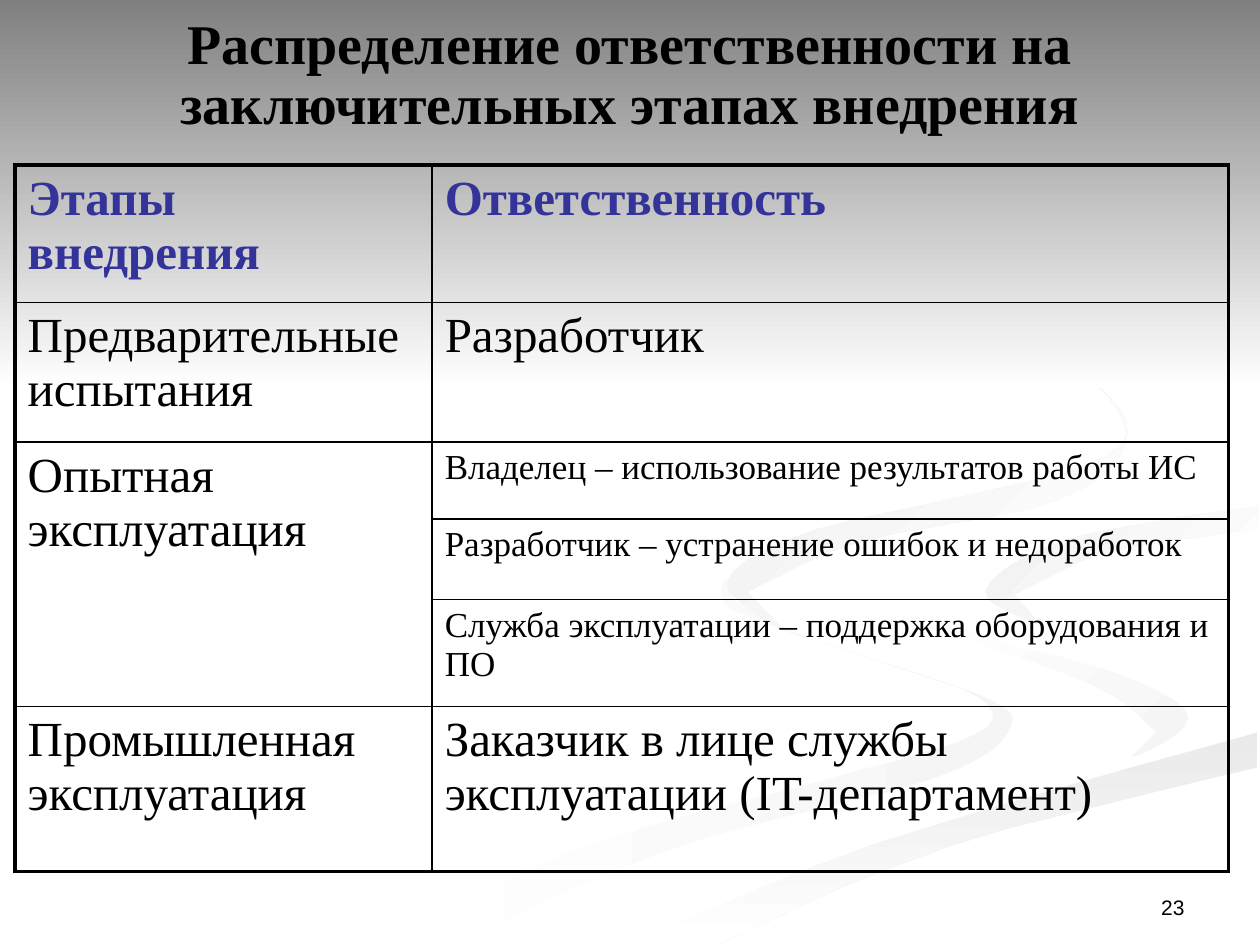
import pptx
import pptx.dml.color
import pptx.enum.shapes
import pptx.enum.text
import pptx.oxml
import pptx.oxml.ns
import pptx.util

PX = 9144  # 100 px to the inch
COLORS = {
    "black": "000000", "white": "FFFFFF", "heading": "333399", "gray": "808080",
    "mist": "F5F5F5", "silver": "EAEAEA", "pearl": "F1F1F1", "smoke": "EDEDED",
}
SERIF = "Times New Roman"
CURVE_STEPS = 5

# Each ribbon: start colour, end colour, clockwise gradient angle, curved edges
RIBBONS = [
    ("white", "mist", 0, [
        [(575, 459), (581, 484), (679, 519), (776, 553), (774, 583), (652, 620),
         (458, 674), (300, 749)],
        [(361, 749), (532, 674), (740, 618), (800, 581), (781, 553), (642, 507),
         (583, 477)]]),
    ("white", "mist", 45, [
        [(724, 464), (758, 498), (888, 535), (943, 570), (894, 605)],
        [(918, 581), (868, 544), (746, 500)]]),
    ("silver", "white", 90, [
        [(503, 749), (696, 669), (998, 581)],
        [(998, 609), (752, 672), (571, 749)]]),
    ("white", "white", 0, [
        [(999, 387), (755, 432), (734, 483), (905, 540), (936, 587), (743, 643),
         (477, 749)],
        [(503, 749), (696, 669), (999, 581)],
        [(999, 538), (832, 498), (781, 463), (850, 427), (999, 402)]]),
    ("pearl", "white", 45, [
        [(998, 402), (850, 427), (782, 469), (826, 496)],
        [(805, 472), (878, 439), (998, 420)]]),
    ("smoke", "white", 45, [
        [(762, 233), (885, 320), (861, 370), (649, 420), (577, 462), (622, 500)],
        [(593, 470), (683, 430), (841, 396), (894, 344), (843, 275)]]),
]

COLUMN_WIDTHS = [331, 632]
ROW_HEIGHTS = [109, 111, 61, 64, 85, 131]
# Each row: stage, responsibility, text size of the responsibility
ROWS = [
    ("Этапы внедрения", "Ответственность", 28),
    ("Предварительные испытания", "Разработчик", 28),
    ("Опытная эксплуатация", "Владелец – использование результатов работы ИС", 20),
    ("", "Разработчик – устранение ошибок и недоработок", 20),
    ("", "Служба эксплуатации – поддержка оборудования и ПО", 20),
    ("Промышленная эксплуатация", "Заказчик в лице службы эксплуатации (IT-департамент)", 28),
]
TRIAL_ROWS = (2, 4)


def px(*lengths):
    return [pptx.util.Emu(length * PX) for length in lengths]


def rgb(name):
    return pptx.dml.color.RGBColor.from_string(COLORS[name])


def smooth(points):
    """Return points along a Catmull-Rom curve through the given ones."""
    padded = [points[0], *points, points[-1]]
    curve = []
    for knots in zip(padded, padded[1:], padded[2:], padded[3:]):
        for step in range(CURVE_STEPS):
            t = step / CURVE_STEPS
            curve.append(tuple(
                round(b + t * (c - a) / 2 + t**2 * (2 * a - 5 * b + 4 * c - d) / 2
                      + t**3 * (3 * b - a - 3 * c + d) / 2)
                for a, b, c, d in zip(*knots)))
    return curve + [points[-1]]


def fill_gradient(shape, start, end, angle):
    """Fill with two colours at a clockwise angle, without line or shadow."""
    shape.shadow.inherit = False
    shape.line.fill.background()
    shape.fill.gradient()
    shape.fill.gradient_angle = -angle % 360
    for stop, color in zip(shape.fill.gradient_stops, (start, end)):
        stop.color.rgb = rgb(color)


def add_ribbon(slide, start, end, angle, edges):
    outline = [point for edge in edges for point in smooth(edge)]
    builder = slide.shapes.build_freeform(*outline[0], scale=PX)
    builder.add_line_segments(outline[1:], close=True)
    fill_gradient(builder.convert_to_shape(), start, end, angle)


def add_top_shade(slide):
    shade = slide.shapes.add_shape(
        pptx.enum.shapes.MSO_SHAPE.RECTANGLE, *px(0, 0, 1000, 308))
    fill_gradient(shade, "gray", "white", 90)


def write(text_frame, text, size, font=SERIF, color="black", bold=False):
    text_frame.text = text
    paragraph = text_frame.paragraphs[0]
    for run in paragraph.runs:
        run.font.name = font
        run.font.size = pptx.util.Pt(size)
        run.font.bold = bold
        run.font.color.rgb = rgb(color)
    return paragraph


def add_text(slide, box, text, size, align, anchor, **style):
    text_frame = slide.shapes.add_textbox(*px(*box)).text_frame
    text_frame.word_wrap = True
    text_frame.vertical_anchor = anchor
    paragraph = write(text_frame, text, size, **style)
    paragraph.alignment = align
    return paragraph


def set_borders(cell, outer_sides):
    """Draw thick lines on the outer sides and thin lines on the others."""
    properties = cell._tc.get_or_add_tcPr()
    for side in "LRTB":
        width = pptx.util.Pt(2.25 if side in outer_sides else 1)
        properties.append(pptx.oxml.parse_xml(
            f'<a:ln{side} {pptx.oxml.ns.nsdecls("a")} w="{width}"><a:solidFill>'
            f'<a:srgbClr val="{COLORS["black"]}"/></a:solidFill></a:ln{side}>'))


def add_stage_table(slide):
    frame = slide.shapes.add_table(
        len(ROWS), 2, *px(12, 131, sum(COLUMN_WIDTHS), sum(ROW_HEIGHTS)))
    table = frame.table
    table.first_row = table.horz_banding = False
    for column, width in zip(table.columns, px(*COLUMN_WIDTHS)):
        column.width = width
    for row, height in zip(table.rows, px(*ROW_HEIGHTS)):
        row.height = height
    for row_index, (stage, duty, duty_size) in enumerate(ROWS):
        is_heading = row_index == 0
        edge = "T" if is_heading else "B" if row_index == len(ROWS) - 1 else ""
        for column_index, (text, size) in enumerate([(stage, 28), (duty, duty_size)]):
            cell = table.cell(row_index, column_index)
            set_borders(cell, edge + "LR"[column_index])
            cell.fill.background()
            if text:
                write(cell.text_frame, text, size, bold=is_heading,
                      color="heading" if is_heading else "black")
    first, last = TRIAL_ROWS
    table.cell(first, 0).merge(table.cell(last, 0))


def main():
    presentation = pptx.Presentation()
    presentation.slide_width, presentation.slide_height = px(1000, 750)
    slide = presentation.slides.add_slide(presentation.slide_layouts[6])
    align, anchor = pptx.enum.text.PP_ALIGN, pptx.enum.text.MSO_ANCHOR
    for ribbon in RIBBONS:
        add_ribbon(slide, *ribbon)
    add_top_shade(slide)
    add_text(slide, (717, 683, 233, 52), "23", 12, align.RIGHT, anchor.BOTTOM, font="Arial")
    title = add_text(
        slide, (50, 13, 900, 95),
        "Распределение ответственности на заключительных этапах внедрения",
        32, align.CENTER, anchor.MIDDLE, bold=True)
    title.line_spacing = 0.9
    add_stage_table(slide)
    presentation.save("out.pptx")


if __name__ == "__main__":
    main()
